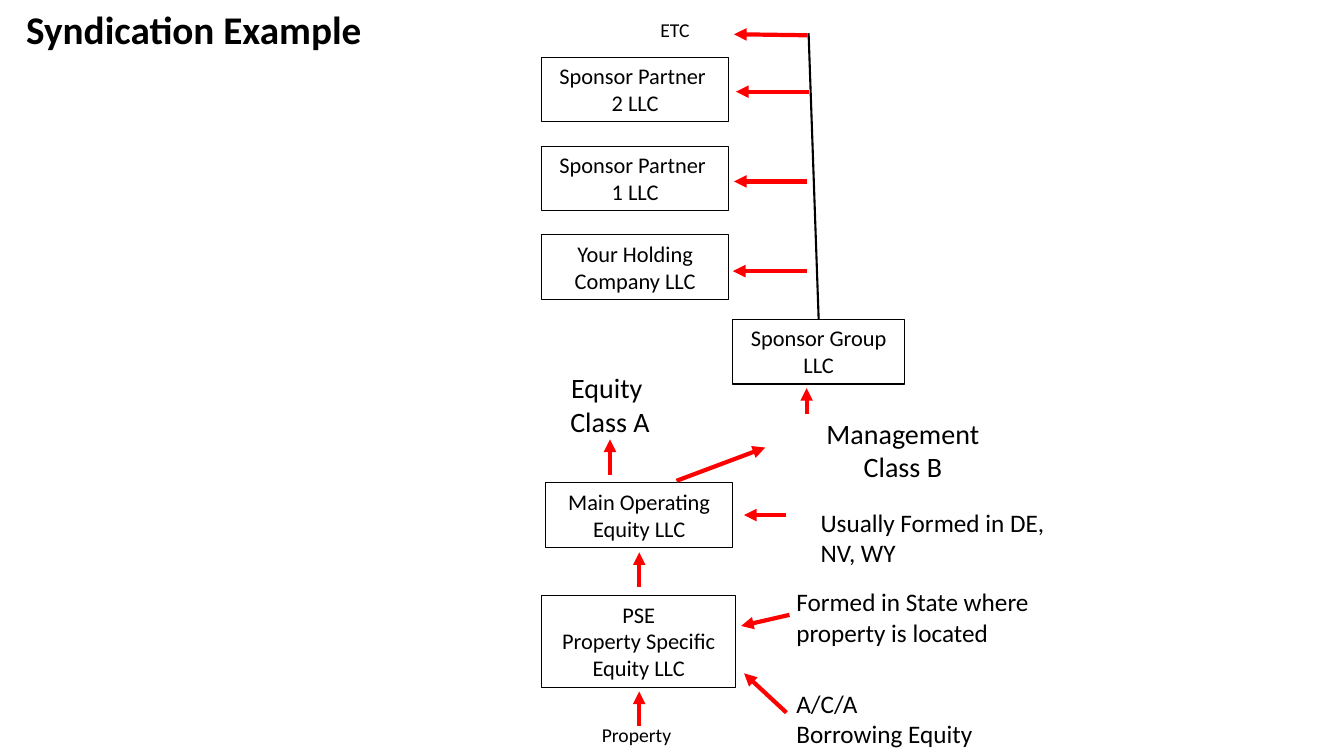
from pptx import Presentation
from pptx.util import Inches, Pt
from pptx.dml.color import RGBColor
from pptx.enum.shapes import MSO_CONNECTOR, MSO_SHAPE
from pptx.enum.text import MSO_ANCHOR, MSO_AUTO_SIZE, PP_ALIGN
from pptx.oxml.ns import qn
from lxml.etree import SubElement

COLORS = {"ink": "000000", "flow": "FF0000"}
FONT = "Calibri"
LEFT, CENTER = PP_ALIGN.LEFT, PP_ALIGN.CENTER

TITLE = "Syndication Example"
PARTNERS = [
    ["Sponsor Partner ", "2 LLC"],
    ["Sponsor Partner ", "1 LLC"],
    ["Your Holding", "Company LLC"],
]
PARTNER_TOP, PARTNER_PITCH = 0.57, 0.88
PARTNER_ARROW_TOP, PARTNER_ARROW_PITCH = 0.91, 0.89

# lines, (left, top, width, height)
SPONSOR_GROUP = (["Sponsor Group", "LLC"], (7.27, 3.17, 1.7, 0.64))
ENTITIES = [
    (["Main Operating", "Equity LLC"], (5.41, 4.79, 1.86, 0.64)),
    (["PSE", "Property Specific", "Equity LLC"], (5.37, 5.91, 1.93, 0.91)),
]
ENTITIES += [
    (lines, (5.37, PARTNER_TOP + row * PARTNER_PITCH, 1.86, 0.64))
    for row, lines in enumerate(PARTNERS)
]

# lines, (left, top, width, height), size, alignment
LABELS = [
    (["ETC"], (6.45, 0.13, 0.62, 0.34), 14, LEFT),
    (["Management", "Class B"], (7.41, 4.08, 3.09, 0.77), 20, CENTER),
    (["Equity ", "Class A"], (5.43, 3.63, 1.24, 0.77), 20, CENTER),
    (["Property"], (5.87, 7.12, 1.19, 0.34), 14, LEFT),
    (["A/C/A", "Borrowing Equity"], (7.8, 6.78, 2.81, 0.71), 18, LEFT),
    (["Formed in State where property is located"], (7.8, 5.77, 2.7, 0.71), 18, LEFT),
    (["Usually Formed in DE, NV, WY"], (8.04, 4.98, 2.47, 0.71), 18, LEFT),
]

# start x, start y, end x, end y
ARROWS = [
    (6.34, 7.2, 6.34, 6.86),
    (6.34, 5.82, 6.34, 5.48),
    (6.71, 4.77, 7.59, 4.44),
    (7.8, 7.07, 7.38, 6.68),
    (7.83, 6.1, 7.35, 6.21),
    (7.8, 5.11, 7.38, 5.11),
    (8, 4.11, 8, 3.85),
    (6.05, 4.71, 6.05, 4.36),
    (8.01, 0.35, 7.28, 0.34),
]
for row, (start_x, end_x) in enumerate([(8.02, 7.3), (8, 7.28), (8, 7.27)]):
    arrow_y = PARTNER_ARROW_TOP + row * PARTNER_ARROW_PITCH
    ARROWS.append((start_x, arrow_y, end_x, arrow_y))
SPINE = (8.12, 3.17, 8.02, 0.33)


def color(name):
    return RGBColor.from_string(COLORS[name])


def write(shape, lines, size, align, bold=False):
    frame = shape.text_frame
    frame_format = {
        "word_wrap": True,
        "auto_size": MSO_AUTO_SIZE.SHAPE_TO_FIT_TEXT,
        "vertical_anchor": MSO_ANCHOR.TOP,
    }
    for attribute, value in frame_format.items():
        setattr(frame, attribute, value)
    frame.text = "\n".join(lines)
    for paragraph in frame.paragraphs:
        paragraph.alignment = align
        font = paragraph.runs[0].font
        for attribute, value in {"name": FONT, "size": Pt(size), "bold": bold}.items():
            setattr(font, attribute, value)
        font.color.rgb = color("ink")


def add_entity(slide, lines, place):
    """Add an outlined company box."""
    entity = slide.shapes.add_shape(MSO_SHAPE.RECTANGLE, *map(Inches, place))
    entity.shadow.inherit = False
    entity.fill.background()
    entity.line.color.rgb = color("ink")
    entity.line.width = Pt(0.75)
    write(entity, lines, 16, CENTER)
    return entity


def add_line(slide, ends, ink, width, arrow=False):
    connector = slide.shapes.add_connector(MSO_CONNECTOR.STRAIGHT, *map(Inches, ends))
    connector.line.color.rgb = color(ink)
    connector.line.width = Pt(width)
    if arrow:
        SubElement(connector.line._get_or_add_ln(), qn("a:tailEnd"), type="triangle")
    SubElement(connector._element.spPr, qn("a:effectLst"))
    return connector


def main():
    deck = Presentation()
    deck.slide_width, deck.slide_height = Inches(13.33), Inches(7.5)
    slide = deck.slides.add_slide(deck.slide_layouts[5])

    title = slide.shapes.title
    title_place = {"left": 0.16, "top": 0, "width": 13.26 - 0.16, "height": 0.57}
    for attribute, value in title_place.items():
        setattr(title, attribute, Inches(value))
    write(title, [TITLE], 28, LEFT, bold=True)

    for lines, place in ENTITIES:
        add_entity(slide, lines, place)
    sponsor_group = add_entity(slide, *SPONSOR_GROUP)

    for lines, place, size, align in LABELS:
        label = slide.shapes.add_textbox(*map(Inches, place))
        write(label, lines, size, align)

    spine = add_line(slide, SPINE, "ink", 1.5)
    spine.begin_connect(sponsor_group, 0)
    for ends in ARROWS:
        add_line(slide, ends, "flow", 3, arrow=True)

    deck.save("out.pptx")


if __name__ == "__main__":
    main()
